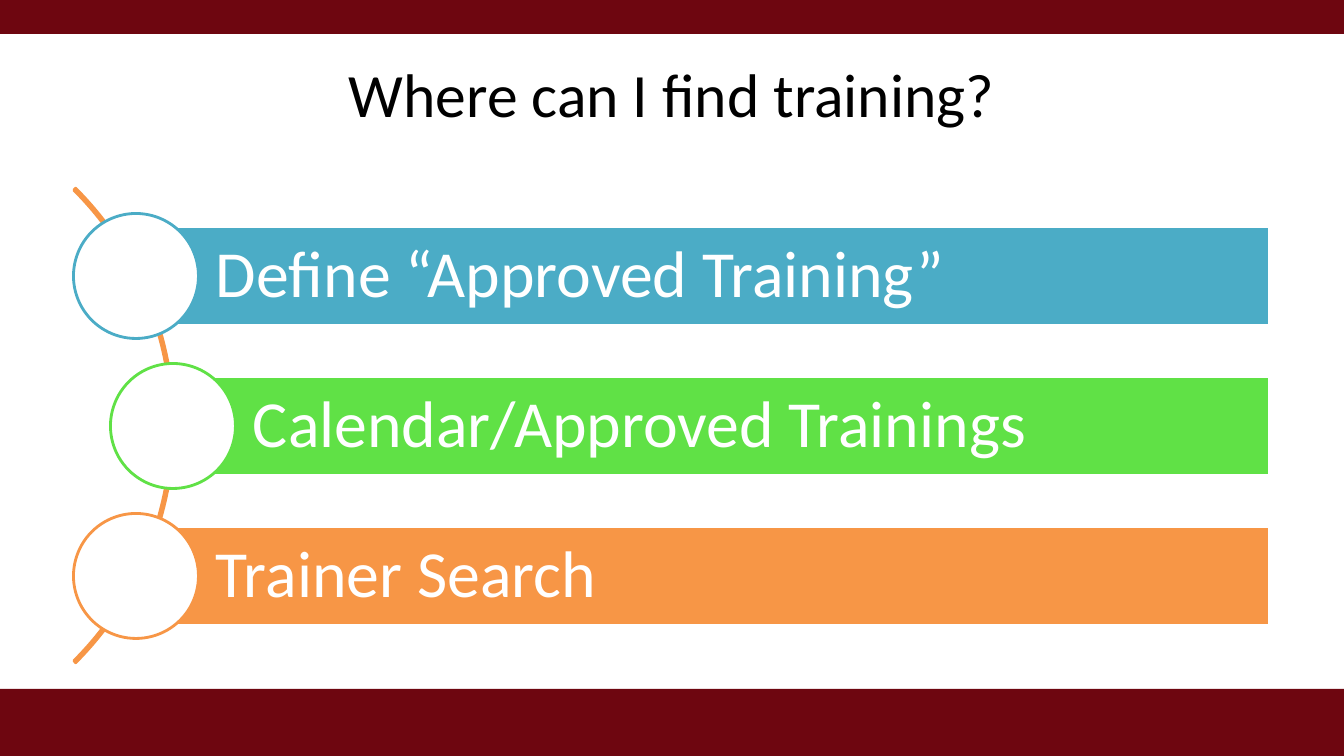
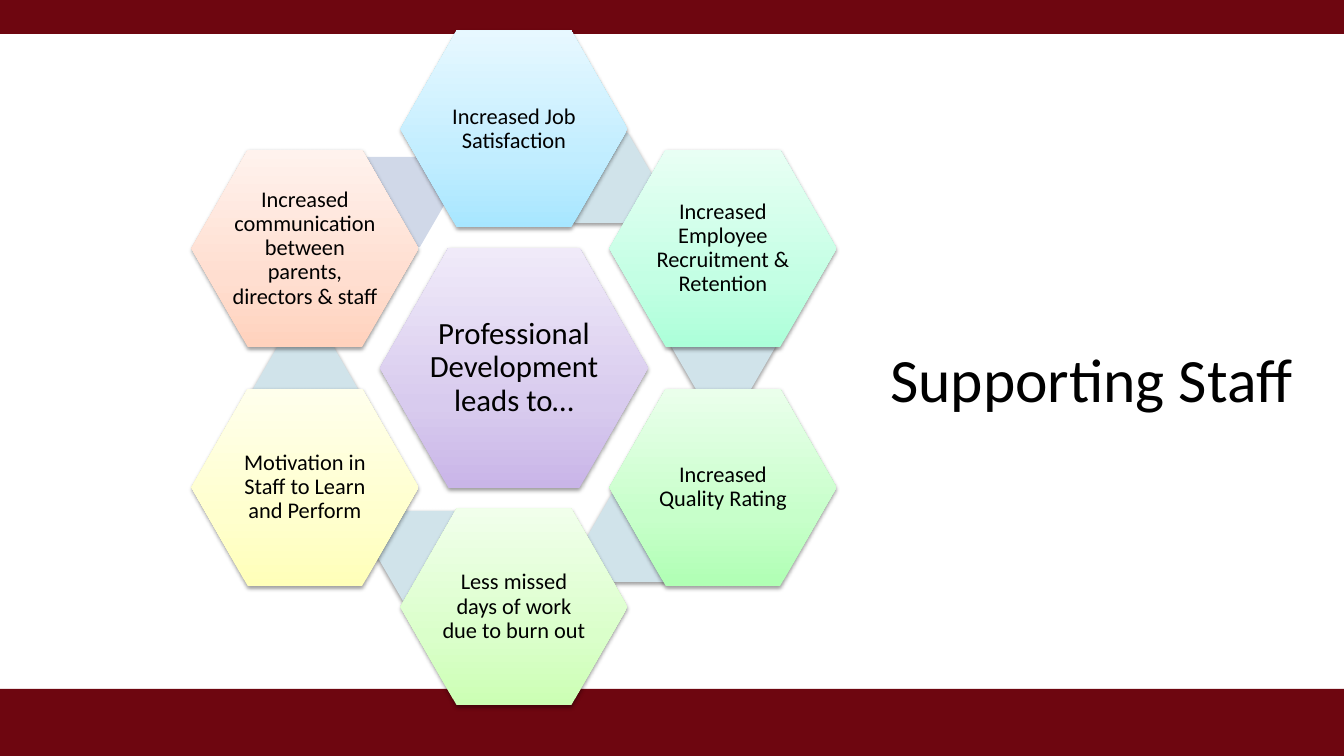
from pptx import Presentation
from pptx.dml.color import RGBColor
from pptx.enum.shapes import MSO_SHAPE as Shape
from pptx.enum.text import MSO_ANCHOR as Anchor, PP_ALIGN as Align
from pptx.oxml import parse_xml
from pptx.oxml.ns import nsdecls, qn
from pptx.util import Pt

EMU_PER_PX = 914400 / 100.8
PAGE_W, PAGE_H = 1344, 756
FONT = "Calibri"
COLORS = {
    "band": "6E0610", "white": "FFFFFF", "black": "000000",
    "blue": "4BACC6", "green": "60E146", "orange": "F79646",
    "link": "D0E3EA", "first_link": "D0D8E8",
}
BANDS = [(0, 0, PAGE_W, 34), (0, 689, PAGE_W, 67)]

# Slide 1: text, colour and circle centre of each bar
TRAINING_TITLE = ("Where can I find training?", (67, 30, 1210, 126))
TRAINING_BARS = [
    ("Define “Approved Training”", "blue", 136),
    ("Calendar/Approved Trainings", "green", 173),
    ("Trainer Search", "orange", 136),
]
BAR_MID_Y, BAR_PITCH, BAR_H, BAR_RIGHT, CIRCLE = 426, 150, 99, 1269, 125
ARC_BOX = (-497, 90, 671, 671)

# Slide 2: text, column and half-row around the centre, gradient from the bottom
STAFF_TITLE = ("Supporting Staff", (859, 260, 465, 235))
CENTRE_TEXT = "Professional Development leads to…"
CENTRE_GRADIENT = ("C9B5E8", "D8CBEE", "F0EAF9")
OUTCOMES = [
    ("Increased Job Satisfaction", 0, -2, ("A7E6FF", "C1EDFF", "E7F8FF")),
    ("Increased Employee Recruitment & Retention", 1, -1, ("ACFFD9", "C4FFE4", "E8FFF4")),
    ("Increased Quality Rating", 1, 1, ("B0FFB4", "C7FFCA", "EAFFEB")),
    ("Less missed days of work due to burn out", 0, 2, ("CCFFB4", "DAFFCA", "F1FFEB")),
    ("Motivation in Staff to Learn and Perform", -1, 1, ("FFFFB9", "FFFFCD", "FFFFEC")),
    ("Increased communication between parents, directors & staff", -1, -1,
     ("FFD2BD", "FFDED0", "FFF2ED")),
]
LINKS = [(341, 157), (549, 133), (671, 301), (587, 492), (377, 511), (253, 344)]
HUB_X, HUB_Y, COLUMN, DOUBLE_ROW = 514, 368, 209, 239
HUB_SIZE, OUTCOME_SIZE, LINK_SIZE = (268, 240), (227, 197), (105, 90)
GRADIENT_STOPS = (0, 35, 100)


def px(value):
    return round(value * EMU_PER_PX)


def rgb(name):
    return RGBColor.from_string(COLORS[name])


def centred(x, y, width, height):
    return x - width / 2, y - height / 2, width, height


def write(shape, text, *, size, color="black", align=Align.CENTER,
          margins=None, spacing=None):
    frame = shape.text_frame
    frame.word_wrap = True
    frame.vertical_anchor = Anchor.MIDDLE
    if margins:
        (frame.margin_left, frame.margin_top,
         frame.margin_right, frame.margin_bottom) = map(px, margins)
    para = frame.paragraphs[0]
    para.alignment = align
    if spacing:
        para.line_spacing = spacing
    span = para.add_run()
    span.text = text
    span.font.name, span.font.size = FONT, Pt(size)
    span.font.color.rgb = rgb(color)


def add_box(page, kind, place, *, fill=None, line=None):
    box = page.shapes.add_shape(kind, *map(px, place))
    box.shadow.inherit = False
    if fill:
        box.fill.solid()
        box.fill.fore_color.rgb = rgb(fill)
    else:
        box.fill.background()
    if line:
        box.line.color.rgb = rgb(line)
        box.line.width = Pt(2)
    else:
        box.line.fill.background()
    return box


def add_shadow(box):
    effects = box.element.spPr.find(qn("a:effectLst"))
    effects.append(parse_xml(
        f'<a:outerShdw {nsdecls("a")} blurRad="{Pt(3.1)}" dist="{Pt(1.6)}" dir="5400000" '
        f'rotWithShape="0"><a:srgbClr val="{COLORS["black"]}"><a:alpha val="38000"/>'
        '</a:srgbClr></a:outerShdw>'))


def set_gradient(box, hexes):
    stops = "".join(f'<a:gs pos="{pos * 1000}"><a:srgbClr val="{value}"/></a:gs>'
                    for pos, value in zip(GRADIENT_STOPS, hexes))
    no_fill = box.element.spPr.find(qn("a:noFill"))
    no_fill.addprevious(parse_xml(
        f'<a:gradFill {nsdecls("a")} rotWithShape="1"><a:gsLst>{stops}</a:gsLst>'
        '<a:lin ang="16200000" scaled="0"/></a:gradFill>'))
    box.element.spPr.remove(no_fill)


def add_hexagon(page, place, adjust, **style):
    box = add_box(page, Shape.HEXAGON, place, **style)
    box.adjustments[0] = adjust
    return box


def add_text_hexagon(page, place, text, hexes, size, inset):
    box = add_hexagon(page, place, 0.286)
    set_gradient(box, hexes)
    add_shadow(box)
    write(box, text, size=size, margins=[inset] * 4, spacing=0.9)


def add_page(deck, title, place):
    page = deck.slides.add_slide(deck.slide_layouts[5])
    holder = page.shapes.title
    holder.left, holder.top, holder.width, holder.height = map(px, place)
    write(holder, title, size=44)
    return page


def share_bands(page):
    """Move the bands to the layout, so that every slide shows them."""
    tree = page.slide_layout.shapes.element
    for place in BANDS:
        band = add_box(page, Shape.RECTANGLE, place, fill="band")
        tree.insert(2, band.element)


def build_training(deck):
    page = add_page(deck, *TRAINING_TITLE)
    share_bands(page)
    arc = add_box(page, Shape.BLOCK_ARC, ARC_BOX, line="orange")
    for index, value in enumerate((189, 27, 0.004)):
        arc.adjustments[index] = value
    for index, (text, color, x) in enumerate(TRAINING_BARS):
        y = BAR_MID_Y + (index - 1) * BAR_PITCH
        bar = add_box(page, Shape.RECTANGLE, (x, y - BAR_H / 2, BAR_RIGHT - x, BAR_H),
                      fill=color, line="white")
        write(bar, text, size=47, color="white", align=Align.LEFT,
              margins=(80, 13, 13, 13), spacing=0.9)
        add_box(page, Shape.OVAL, centred(x, y, CIRCLE, CIRCLE), fill="white", line=color)


def build_staff(deck):
    page = add_page(deck, *STAFF_TITLE)
    # Links lie behind the ring; only the first has no shadow
    for index, corner in enumerate(LINKS):
        link = add_hexagon(page, corner + LINK_SIZE, 0.289,
                           fill="link" if index else "first_link")
        if index:
            add_shadow(link)
    add_text_hexagon(page, centred(HUB_X, HUB_Y, *HUB_SIZE),
                     CENTRE_TEXT, CENTRE_GRADIENT, 22, 3)
    for text, column, half_row, hexes in OUTCOMES:
        place = centred(HUB_X + column * COLUMN, HUB_Y + half_row * DOUBLE_ROW / 2,
                        *OUTCOME_SIZE)
        add_text_hexagon(page, place, text, hexes, 16, 2)


def main():
    deck = Presentation()
    deck.slide_width, deck.slide_height = px(PAGE_W), px(PAGE_H)
    build_training(deck)
    build_staff(deck)
    deck.save("out.pptx")


if __name__ == "__main__":
    main()
